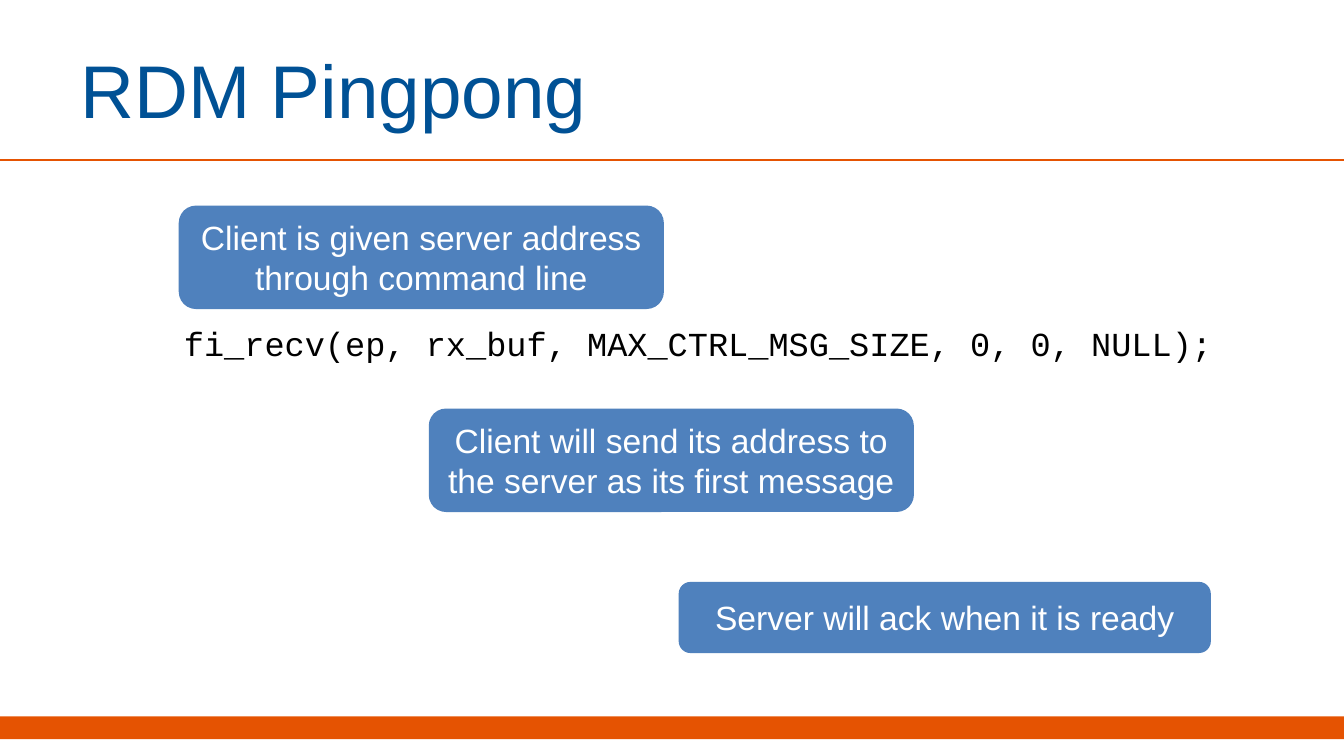
from dataclasses import dataclass

from lxml.etree import SubElement
from pptx import Presentation
from pptx.dml.color import RGBColor
from pptx.enum.shapes import MSO_CONNECTOR, MSO_SHAPE
from pptx.enum.text import MSO_ANCHOR, PP_ALIGN
from pptx.oxml.ns import qn
from pptx.shapes.autoshape import Shape
from pptx.slide import Slide
from pptx.util import Pt

COLOURS = {
    "accent": "E55302",
    "title": "005195",
    "code": "000000",
    "callout": "4F81BD",
    "callout_text": "FFFFFF",
}
SLIDE_WIDTH, SLIDE_HEIGHT = 720, 405
INSET = 7.2
FIRST_CALLOUT_LEFT, CALLOUT_STEP = 95.76, 133.92


@dataclass(frozen=True)
class Box:
    left: float
    top: float
    width: float
    height: float

    def lengths(self) -> tuple[Pt, Pt, Pt, Pt]:
        return Pt(self.left), Pt(self.top), Pt(self.width), Pt(self.height)


@dataclass(frozen=True)
class TextStyle:
    size: float
    colour: str
    font: str = "Arial"
    align: PP_ALIGN = PP_ALIGN.LEFT
    anchor: MSO_ANCHOR = MSO_ANCHOR.MIDDLE


@dataclass(frozen=True)
class Callout:
    text: str
    top: float
    width: float
    height: float


TITLE = TextStyle(40, "title")
CODE = TextStyle(18, "code", font="Courier New", anchor=MSO_ANCHOR.TOP)
CALLOUT = TextStyle(18, "callout_text", align=PP_ALIGN.CENTER)

CALLOUTS = [
    Callout("Client is given server address through command line", 110.16, 259.92, 55.44),
    Callout("Client will send its address to the server as its first message", 218.88, 259.92, 55.44),
    Callout("Server will ack when it is ready", 311.76, 285.12, 38.16),
]


def colour(name: str) -> RGBColor:
    return RGBColor.from_string(COLOURS[name])


def write(holder: Shape, text: str, style: TextStyle) -> None:
    frame = holder.text_frame
    frame.word_wrap = True
    frame.vertical_anchor = style.anchor
    frame.margin_left = frame.margin_right = Pt(INSET)
    frame.margin_top = frame.margin_bottom = Pt(INSET)
    paragraph = frame.paragraphs[0]
    paragraph.alignment = style.align
    run = paragraph.add_run()
    run.text = text
    run.font.name = style.font
    run.font.size = Pt(style.size)
    run.font.color.rgb = colour(style.colour)


def add_text(slide: Slide, box: Box, text: str, style: TextStyle) -> None:
    write(slide.shapes.add_textbox(*box.lengths()), text, style)


def add_filled(slide: Slide, kind: MSO_SHAPE, box: Box, fill: str) -> Shape:
    panel = slide.shapes.add_shape(kind, *box.lengths())
    panel.shadow.inherit = False
    panel.fill.solid()
    panel.fill.fore_color.rgb = colour(fill)
    panel.line.fill.background()
    return panel


def add_rule(slide: Slide, top: float) -> None:
    rule = slide.shapes.add_connector(
        MSO_CONNECTOR.STRAIGHT, Pt(0), Pt(top), Pt(SLIDE_WIDTH), Pt(top)
    )
    rule.line.color.rgb = colour("accent")
    rule.line.width = Pt(1)
    SubElement(rule._element.spPr, qn("a:effectLst"))


def main() -> None:
    """Build the RDM Pingpong slide."""
    presentation = Presentation()
    presentation.slide_width, presentation.slide_height = Pt(SLIDE_WIDTH), Pt(SLIDE_HEIGHT)
    slide = presentation.slides.add_slide(presentation.slide_layouts[6])

    add_filled(slide, MSO_SHAPE.RECTANGLE, Box(0, 383.76, SLIDE_WIDTH, 12.24), "accent")
    add_rule(slide, 85.68)
    add_text(slide, Box(36, 13.68, 588.24, 67.68), "RDM Pingpong", TITLE)
    add_text(
        slide,
        Box(48.24, 165.6, 648, 207.36),
        "    fi_recv(ep, rx_buf, MAX_CTRL_MSG_SIZE, 0, 0, NULL);",
        CODE,
    )
    for index, callout in enumerate(CALLOUTS):
        left = FIRST_CALLOUT_LEFT + index * CALLOUT_STEP
        box = Box(left, callout.top, callout.width, callout.height)
        panel = add_filled(slide, MSO_SHAPE.ROUNDED_RECTANGLE, box, "callout")
        write(panel, callout.text, CALLOUT)

    presentation.save("out.pptx")


if __name__ == "__main__":
    main()
